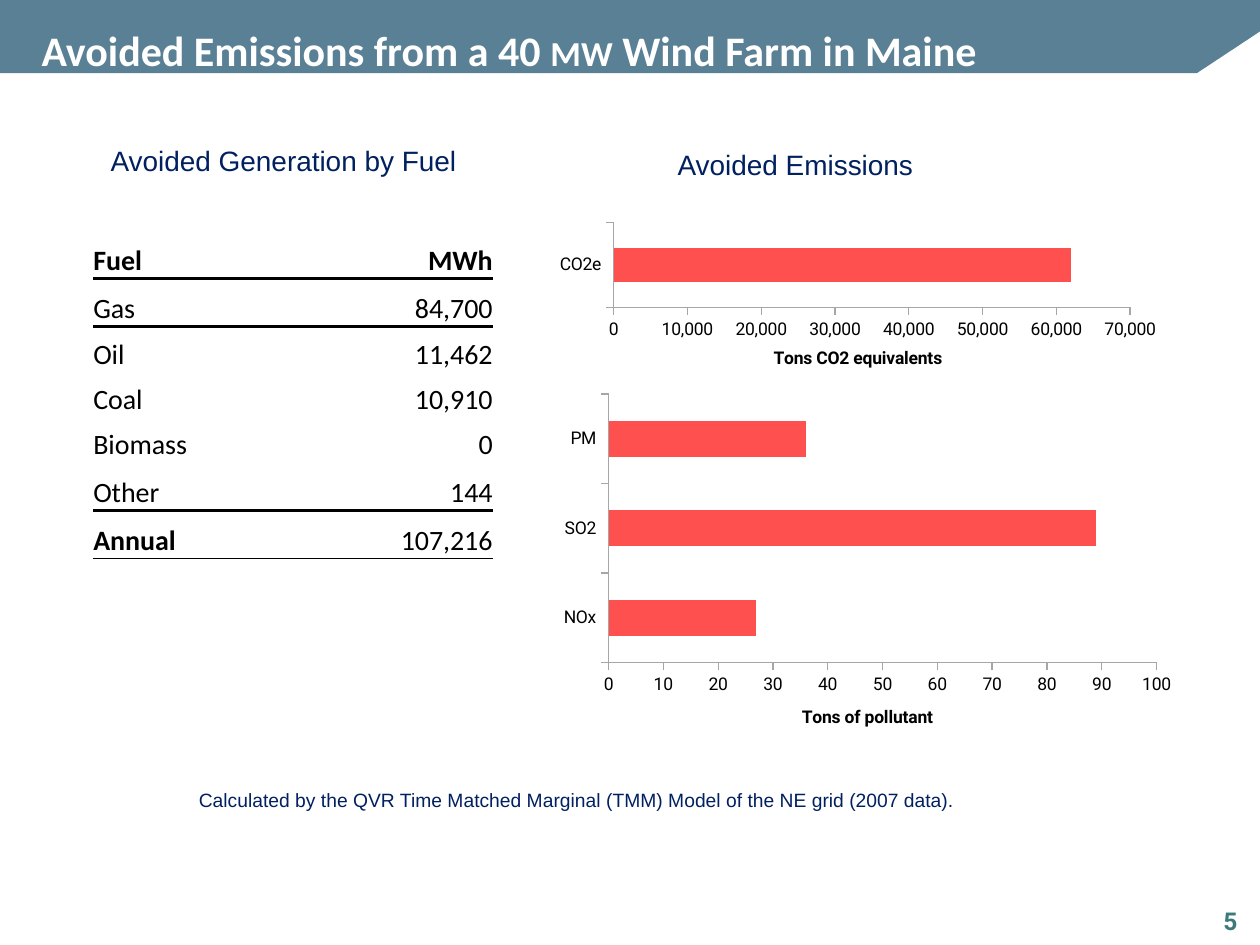
"""Build the slide on avoided emissions from a 40 MW wind farm in Maine."""
from dataclasses import dataclass

from lxml import etree
from pptx import Presentation
from pptx.chart.data import CategoryChartData
from pptx.dml.color import RGBColor
from pptx.enum.chart import XL_CHART_TYPE, XL_TICK_MARK
from pptx.enum.text import MSO_ANCHOR, PP_ALIGN
from pptx.oxml import parse_xml
from pptx.oxml.ns import nsdecls, qn
from pptx.util import Inches, Pt

BAR = XL_CHART_TYPE.BAR_CLUSTERED
TICK_OUT, TICK_NONE = XL_TICK_MARK.OUTSIDE, XL_TICK_MARK.NONE
LEFT, RIGHT = PP_ALIGN.LEFT, PP_ALIGN.RIGHT
MIDDLE, BOTTOM = MSO_ANCHOR.MIDDLE, MSO_ANCHOR.BOTTOM


@dataclass(frozen=True)
class Theme:
    band: RGBColor = RGBColor.from_string("598094")
    white: RGBColor = RGBColor.from_string("FFFFFF")
    black: RGBColor = RGBColor.from_string("000000")
    navy: RGBColor = RGBColor.from_string("002060")
    teal: RGBColor = RGBColor.from_string("3D7B7A")
    bar: RGBColor = RGBColor.from_string("FF5050")
    axis: RGBColor = RGBColor.from_string("A6A6A6")
    title_font: str = "Calibri"
    text_font: str = "Arial"
    chart_font: str = "Roboto"
    title: int = 24
    unit: int = 20
    heading: int = 16
    number: int = 14
    note: int = 11
    chart: int = 10


theme = Theme()
deck = Presentation()
deck.slide_width, deck.slide_height = Inches(10), Inches(7.5)
slide = deck.slides.add_slide(deck.slide_layouts[6])
grid = deck.slide_width / 100


def place(*cells):
    return [round(cell * grid) for cell in cells]


def add_label(cells, spans, font, color, bold=False, align=LEFT):
    box = slide.shapes.add_textbox(*place(*cells))
    frame = box.text_frame
    frame.word_wrap = True
    para = frame.paragraphs[0]
    para.alignment = align
    para.font.name, para.font.bold = font, bold
    para.font.color.rgb = color
    for text, size in spans:
        span = para.add_run()
        span.text, span.font.size = text, Pt(size)
    return frame


outline = [place(*point) for point in [(0, 5.8), (95, 5.8), (100, 2.5), (100, 0), (0, 0)]]
builder = slide.shapes.build_freeform(*outline[0], scale=1.0)
builder.add_line_segments(outline[1:], close=True)
band = builder.convert_to_shape()
band.shadow.inherit = False
band.fill.solid()
band.fill.fore_color.rgb = theme.band
band.line.fill.background()

add_label((92.5, 71.4, 6.7, 3.3), [("5", theme.number)], theme.chart_font, theme.teal, True, RIGHT)
title = add_label(
    (3.3, 0, 91.7, 7.9),
    [
        ("Avoided Emissions from a 40 ", theme.title),
        ("MW", theme.unit),
        (" Wind Farm in Maine", theme.title),
    ],
    theme.title_font, theme.white, True,
)
title.margin_left = 0
title.vertical_anchor = MIDDLE

fuel_rows = [
    ("Fuel", "MWh"),
    ("Gas", "84,700"),
    ("Oil", "11,462"),
    ("Coal", "10,910"),
    ("Biomass", "0"),
    ("Other", "144"),
    ("Annual", "107,216"),
]
bold_cells = {(0, 0), (0, 1), (6, 0)}
rules_below = {0: 2, 5: 2, 6: 0.5}
table_frame = slide.shapes.add_table(len(fuel_rows), 2, *place(7.4, 18.3, 31.7, 25.8))
table = table_frame.table
table.first_row = table.horz_banding = False
style = table_frame.element.find(".//" + qn("a:tableStyleId"))
style.text = "{2D5ABB26-0587-4C30-8999-92F81FD0307C}"
for column, width in zip(table.columns, place(16.4, 15.3)):
    column.width = width
for row, height in zip(table.rows, place(3.8, 3.8, 3.6, 3.6, 3.6, 3.8, 3.8)):
    row.height = height
for row_index, values in enumerate(fuel_rows):
    for column_index, value in enumerate(values):
        cell = table.cell(row_index, column_index)
        cell.margin_left = cell.margin_right = cell.margin_top = cell.margin_bottom = 0
        cell.vertical_anchor = BOTTOM
        cell.fill.background()
        para = cell.text_frame.paragraphs[0]
        para.text = value
        para.alignment = (LEFT, RIGHT)[column_index]
        para.font.name, para.font.size = theme.title_font, Pt(theme.heading)
        para.font.bold = (row_index, column_index) in bold_cells
        para.font.color.rgb = theme.black
        properties = cell._tc.get_or_add_tcPr()
        for edge, rule_row in (("lnB", row_index), ("lnT", row_index - 1)):
            if rule_row in rules_below:
                properties.insert(0, parse_xml(
                    f'<a:{edge} {nsdecls("a")} w="{Pt(rules_below[rule_row])}"><a:solidFill>'
                    f'<a:srgbClr val="{theme.black}"/></a:solidFill></a:{edge}>'
                ))

charts = [
    ((43.2, 16.2, 50, 16.4), (0.11, 0.09, 0.82, 0.41), "Tons CO2 equivalents",
     {"CO2e": 62000}, 70000, 10000),
    ((43.8, 30.7, 50, 29.2), (0.09, 0.02, 0.87, 0.73), "Tons of pollutant",
     {"NOx": 27, "SO2": 89, "PM": 36}, 100, 10),
]
for cells, plot_share, axis_title, emissions, maximum, step in charts:
    data = CategoryChartData(number_format="#,##0")
    data.categories = list(emissions)
    data.add_series("Series 1", list(emissions.values()))
    chart = slide.shapes.add_chart(BAR, *place(*cells), data).chart
    chart.has_legend = chart.has_title = False
    chart.font.name, chart.font.size = theme.chart_font, Pt(theme.chart)
    chart.font.color.rgb = theme.black
    plot = chart.plots[0]
    plot.gap_width, plot.vary_by_categories = 150, False
    fill = plot.series[0].format.fill
    fill.solid()
    fill.fore_color.rgb = theme.bar

    for axis in (chart.category_axis, chart.value_axis):
        axis.has_major_gridlines = False
        axis.major_tick_mark, axis.minor_tick_mark = TICK_OUT, TICK_NONE
        axis.format.line.color.rgb = theme.axis
        axis.format.line.width = Pt(0.75)
    values_axis = chart.value_axis
    values_axis.minimum_scale, values_axis.maximum_scale = 0, maximum
    values_axis.major_unit = step
    values_axis.tick_labels.number_format = "#,##0"
    values_axis.tick_labels.number_format_is_linked = False
    para = values_axis.axis_title.text_frame.paragraphs[0]
    para.text = axis_title
    para.font.name, para.font.size, para.font.bold = theme.chart_font, Pt(theme.chart), True
    para.font.color.rgb = theme.black

    plot_area = chart.element.find(".//" + qn("c:plotArea"))
    for automatic in plot_area.findall(qn("c:layout")):
        plot_area.remove(automatic)
    layout = etree.Element(qn("c:layout"))
    manual = etree.SubElement(layout, qn("c:manualLayout"))
    settings = [("layoutTarget", "inner"), ("xMode", "edge"), ("yMode", "edge")]
    for name, value in settings + list(zip("xywh", plot_share)):
        etree.SubElement(manual, qn(f"c:{name}")).set("val", str(value))
    plot_area.insert(0, layout)

source_note = "Calculated by the QVR Time Matched Marginal (TMM) Model of the NE grid (2007 data)."
captions = [
    ((7.8, 10.9, 31.7, 3.7), "Avoided Generation by Fuel", theme.heading),
    ((52.8, 11.2, 36, 3.7), "Avoided Emissions", theme.heading),
    ((14.8, 62.1, 62.3, 2.9), source_note, theme.note),
]
for cells, text, size in captions:
    add_label(cells, [(text, size)], theme.text_font, theme.navy)

deck.save("out.pptx")
